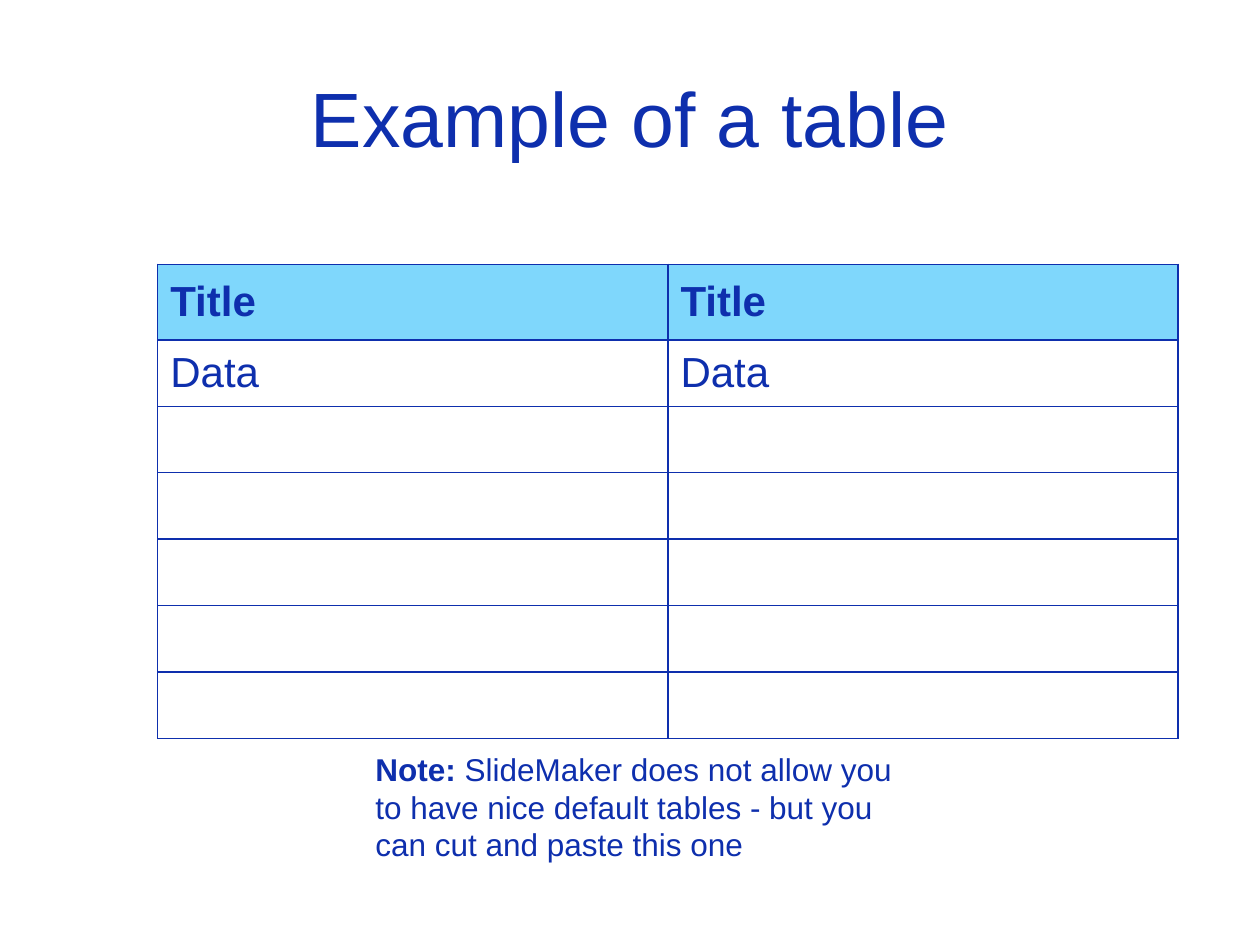
from dataclasses import dataclass

from lxml import etree
from pptx import Presentation
from pptx.dml.color import RGBColor
from pptx.enum.text import MSO_ANCHOR as Anchor, MSO_AUTO_SIZE as AutoSize, PP_ALIGN as Align
from pptx.oxml.ns import qn
from pptx.util import Cm, Pt


@dataclass(frozen=True)
class Theme:
    font: str = "Arial"
    ink: RGBColor = RGBColor(0x0E, 0x2F, 0xAD)
    header: RGBColor = RGBColor(0x7F, 0xD7, 0xFC)
    title_size: Pt = Pt(44)
    table_size: Pt = Pt(24)
    note_size: Pt = Pt(18)
    border: Pt = Pt(1)


theme = Theme()


def style_font(paragraph, size, bold=None):
    paragraph.font.name = theme.font
    paragraph.font.size = size
    paragraph.font.color.rgb = theme.ink
    paragraph.font.bold = bold


def add_borders(cell):
    properties = cell._tc.get_or_add_tcPr()
    for side in ("lnL", "lnR", "lnT", "lnB"):
        line = etree.SubElement(properties, qn(f"a:{side}"), w=str(theme.border))
        fill = etree.SubElement(line, qn("a:solidFill"))
        etree.SubElement(fill, qn("a:srgbClr"), val=str(theme.ink))


presentation = Presentation()
presentation.slide_width, presentation.slide_height = Cm(25.4), Cm(19.05)
slide = presentation.slides.add_slide(presentation.slide_layouts[6])

# Title
title = slide.shapes.add_textbox(Cm(1.27), Cm(0.76), Cm(22.86), Cm(3.18)).text_frame
title.word_wrap = True
title.vertical_anchor = Anchor.MIDDLE
title.text = "Example of a table"
title.paragraphs[0].alignment = Align.CENTER
style_font(title.paragraphs[0], theme.title_size)

# Table: header, one data row, five empty rows
row_texts = ["Title", "Data"] + [""] * 5
column_count = 2
header_height, row_height = Cm(1.52), Cm(1.34)
table_height = header_height + row_height * (len(row_texts) - 1)
table = slide.shapes.add_table(
    len(row_texts), column_count, Cm(3.18), Cm(5.33), Cm(20.57), table_height
).table
table.horz_banding = False
for row_index, text in enumerate(row_texts):
    is_header = row_index == 0
    table.rows[row_index].height = header_height if is_header else row_height
    for cell in table.rows[row_index].cells:
        add_borders(cell)
        if is_header:
            cell.fill.solid()
            cell.fill.fore_color.rgb = theme.header
        else:
            cell.fill.background()
        cell.vertical_anchor = Anchor.MIDDLE
        cell.text = text
        style_font(cell.text_frame.paragraphs[0], theme.table_size, bold=is_header)

# Note below the table
note = slide.shapes.add_textbox(Cm(7.32), Cm(14.99), Cm(11.4), Cm(2.54)).text_frame
note.word_wrap = True
note.auto_size = AutoSize.SHAPE_TO_FIT_TEXT
paragraph = note.paragraphs[0]
label = paragraph.add_run()
label.text = "Note: "
label.font.bold = True
paragraph.add_run().text = (
    "SlideMaker does not allow you to have nice default tables"
    " - but you can cut and paste this one"
)
style_font(paragraph, theme.note_size)

presentation.save("out.pptx")
